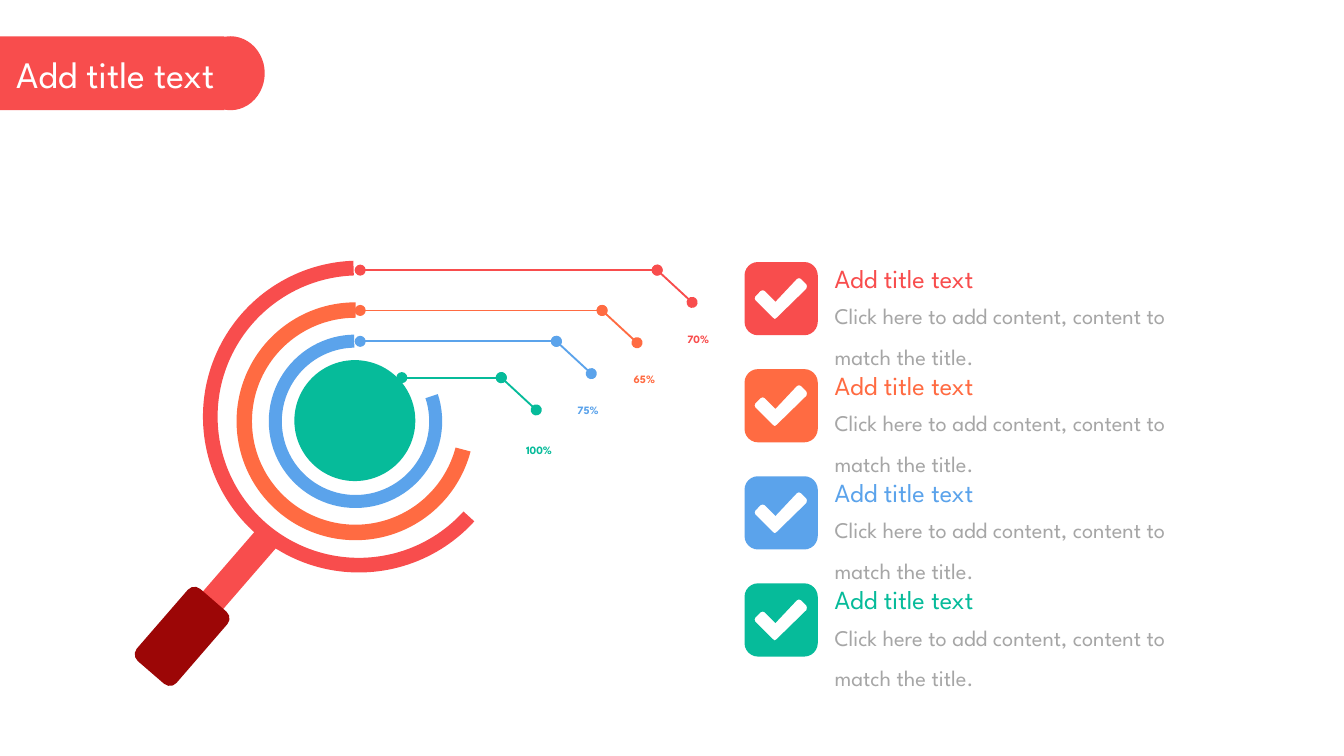
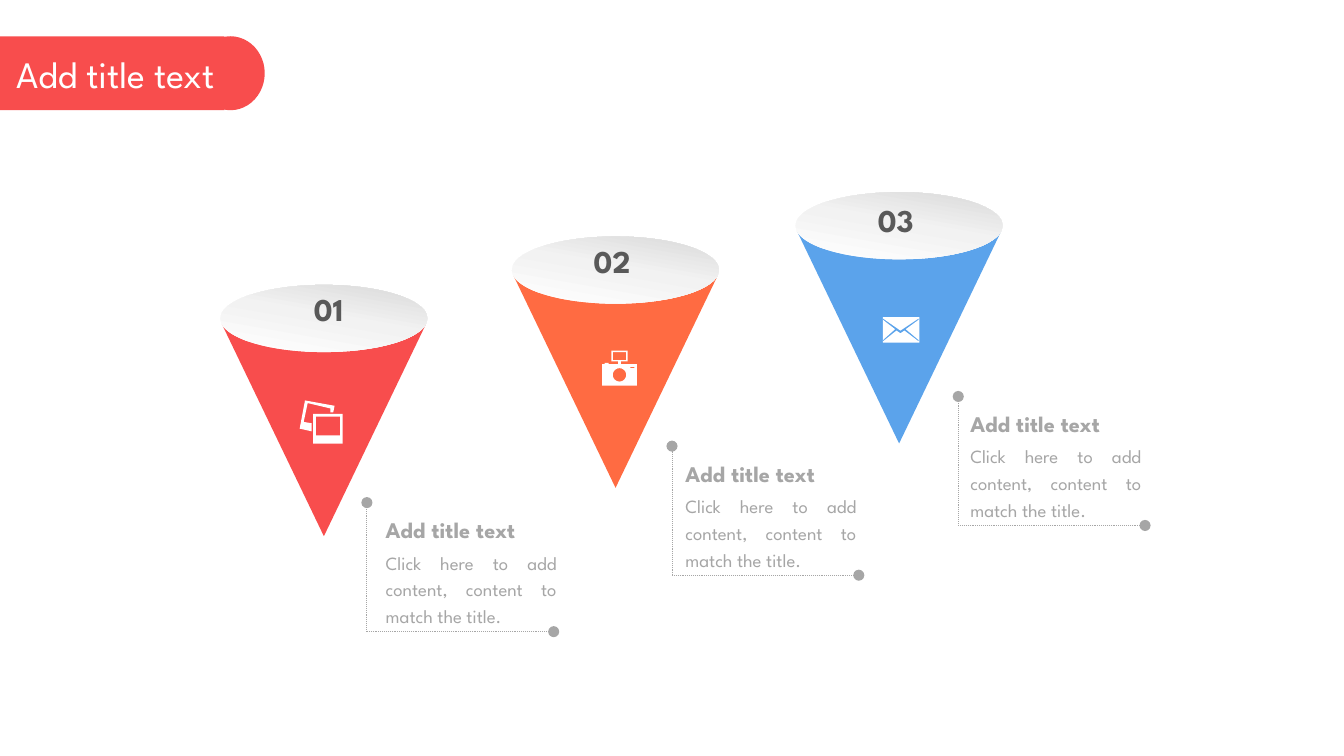
import copy
import math

import pptx
import pptx.dml.color
import pptx.enum.dml
import pptx.enum.shapes
import pptx.enum.text
import pptx.oxml.ns
import pptx.util
from lxml import etree

Inches = pptx.util.Inches
Pt = pptx.util.Pt
qn = pptx.oxml.ns.qn
SHAPE = pptx.enum.shapes.MSO_SHAPE
ALIGN = pptx.enum.text.PP_ALIGN
ANCHOR = pptx.enum.text.MSO_ANCHOR

FONT = "League Spartan"
COLORS = {
    "red": "F84D4D", "orange": "FF6B42", "blue": "5BA3EB", "green": "06BB9A",
    "grip": "9C0606", "white": "FFFFFF", "pale": "F2F2F2", "silver": "D9D9D9",
    "grey": "A6A6A6", "dark": "595959",
}
TITLE = "Add title text"
BODY = "Click here to add content, content to match the title."
TIGHT = (0, 0)
PADDED = (0.07, 0.04)


def rgb(color):
    """Return the palette colour as an RGBColor."""
    return pptx.dml.color.RGBColor.from_string(COLORS[color])


def paint(shape, color):
    """Give a shape a flat fill without line or shadow."""
    shape.shadow.inherit = False
    shape.fill.solid()
    shape.fill.fore_color.rgb = rgb(color)
    shape.line.fill.background()
    return shape


def preset(slide, kind, box, color, rotation=0):
    """Add a flat preset shape."""
    shape = slide.shapes.add_shape(kind, *map(Inches, box))
    shape.rotation = rotation
    return paint(shape, color)


def outline(slide, left, top, contours, color):
    """Add a freeform whose later contours cut holes into the first."""
    contours = [[(Inches(left + x), Inches(top + y)) for x, y in contour] for contour in contours]
    builder = slide.shapes.build_freeform(*contours[0][0])
    for number, contour in enumerate(contours):
        if number:
            builder.move_to(*contour[0])
        builder.add_line_segments(contour[1:], close=True)
    return paint(builder.convert_to_shape(), color)


def arc(x, y, radius, start, end, steps):
    """Return points along a circular arc, with angles in degrees."""
    angles = [math.radians(start + (end - start) * i / steps) for i in range(steps + 1)]
    return [(x + radius * math.cos(a), y + radius * math.sin(a)) for a in angles]


def rectangle(left, top, right, bottom):
    """Return the corners of a rectangle."""
    return [(left, top), (right, top), (right, bottom), (left, bottom)]


def format_text(shape, text, size, color, bold=False, align=ALIGN.LEFT, spacing=None,
                before=0, insets=TIGHT, anchor=ANCHOR.TOP, wrap=True):
    """Write one paragraph into a shape and format it."""
    frame = shape.text_frame
    frame.text = text
    frame.word_wrap = wrap
    frame.auto_size = pptx.enum.text.MSO_AUTO_SIZE.SHAPE_TO_FIT_TEXT
    frame.vertical_anchor = anchor
    frame.margin_left = frame.margin_right = Inches(insets[0])
    frame.margin_top = frame.margin_bottom = Inches(insets[1])
    paragraph = frame.paragraphs[0]
    paragraph.alignment = align
    paragraph.space_before = Pt(before * size)
    if spacing:
        paragraph.line_spacing = spacing
    font = paragraph.font
    font.name, font.size, font.bold = FONT, Pt(size), bold
    font.color.rgb = rgb(color)


def label(slide, box, text, size, color, **options):
    """Add a formatted text box."""
    format_text(slide.shapes.add_textbox(*map(Inches, box)), text, size, color, **options)


def line(slide, start, end, color, width, ends, dash=None):
    """Add a straight connector with oval ends."""
    connector = slide.shapes.add_connector(
        pptx.enum.shapes.MSO_CONNECTOR.STRAIGHT, *map(Inches, start + end))
    connector.line.color.rgb = rgb(color)
    connector.line.width = Pt(width)
    if dash:
        connector.line.dash_style = dash
    properties = connector._element.spPr
    for end_name in ends:
        etree.SubElement(properties.find(qn("a:ln")), qn(f"a:{end_name}"), type="oval")
    etree.SubElement(properties, qn("a:effectLst"))


def title_band(slide, layout):
    """Build the rounded title band and place it on the layout."""
    for number, (kind, left, width) in enumerate(
            [(SHAPE.RECTANGLE, 0, 1.67), (SHAPE.OVAL, 1.46, 0.51)]):
        part = preset(slide, kind, (left, 0.27, width, 0.55), "red")
        part._element.nvSpPr.cNvPr.set("id", str(101 + number))
        layout.shapes._spTree.append(part._element)


def titled_slide(deck, layout):
    """Add a slide with its title set in the band."""
    slide = deck.slides.add_slide(layout)
    title = slide.shapes.title
    title.left, title.top, title.width, title.height = map(Inches, (0.12, 0.38, 1.85, 0.34))
    format_text(title, TITLE, 20, "white", anchor=ANCHOR.MIDDLE)
    return slide


def ring(slide, left, top, size, adjustments, color):
    """Add one open ring of the magnifier."""
    shape = preset(slide, SHAPE.BLOCK_ARC, (left, top, size, size), color, 45)
    for index, value in enumerate(adjustments):
        shape.adjustments[index] = value


def magnifier(slide, left, top):
    """Draw the magnifier with its rings and handle."""
    ring(slide, left + 0.6, top + 0.31, 1.77, (197.83, 135.07, 0.065), "orange")
    preset(slide, SHAPE.RECTANGLE, (left + 0.47, top + 1.91, 0.2, 0.9), "red", 40.9)
    preset(slide, SHAPE.ROUNDED_RECTANGLE, (left, top + 2.44, 0.39, 0.71), "grip", 40.9)
    ring(slide, left + 0.35, top, 2.32, (214.33, 133.78, 0.047), "red")
    ring(slide, left + 0.84, top + 0.55, 1.29, (178.06, 134.45, 0.075), "blue")
    preset(slide, SHAPE.OVAL, (left + 1.03, top + 0.74, 0.9, 0.9), "green", 45)


def callout(slide, start, bend, y, color, percent, box):
    """Draw a bent leader from a ring to its percentage."""
    ends = ("headEnd", "tailEnd")
    line(slide, (bend + 0.26, y + 0.24), (bend, y), color, 1, ends)
    line(slide, (bend, y), (start, y), color, 1, ends)
    label(slide, box, percent, 6, color, bold=True, align=ALIGN.CENTER, spacing=1.5,
          before=0.2, anchor=ANCHOR.BOTTOM, wrap=False)


def check_item(slide, left, top, color):
    """Draw a check badge with a heading and text beside it."""
    size, radius = 0.545, 0.1
    near, far = radius, size - radius
    corners = [(far, far, 0), (near, far, 90), (near, near, 180), (far, near, 270)]
    badge = [point for x, y, angle in corners
             for point in arc(x, y, radius, angle, angle + 90, 6)]
    check = [(0.46, 0.2), (0.465, 0.18), (0.46, 0.165), (0.42, 0.125), (0.405, 0.12),
             (0.39, 0.125), (0.23, 0.295), (0.15, 0.215), (0.135, 0.21), (0.12, 0.215),
             (0.08, 0.255), (0.075, 0.27), (0.08, 0.285), (0.21, 0.415), (0.225, 0.425),
             (0.24, 0.415)]
    outline(slide, left, top, [badge, check], color)
    label(slide, (left + 0.67, top, 1.21, 0.24), TITLE, 14, color, before=0.2, wrap=False)
    label(slide, (left + 0.67, top + 0.2, 2.5, 0.57), BODY, 12, "grey", spacing=1.5, before=0.2)


def cone(slide, left, top, color, number, number_at):
    """Draw a cone with a shaded lid and its number."""
    body = [(1.48, 0), (1.52, 0.01), (0.76, 1.59), (0, 0.01), (0.06, 0)]
    outline(slide, left + 0.01, top + 0.28, [body], color)
    lid = preset(slide, SHAPE.OVAL, (left, top, 1.54, 0.5), "white")
    lid.fill.gradient()
    lid.fill.gradient_angle = 80
    stops = lid._element.spPr.find(".//" + qn("a:gsLst"))
    stops.insert(1, copy.deepcopy(stops[0]))
    shades = [(0, "white"), (0.53, "pale"), (1, "silver")]
    for stop, (position, shade) in zip(lid.fill.gradient_stops, shades):
        stop.position = position
        stop.color.rgb = rgb(shade)
    label(slide, (*number_at, 0.43, 0.38), number, 17, "dark", bold=True,
          align=ALIGN.CENTER, spacing=1.2, insets=PADDED, wrap=False)


def photos_icon(slide, left, top):
    """Draw two overlapping photo frames."""
    outline(slide, left + 0.1, top + 0.1,
            [rectangle(0, 0, 0.22, 0.22), rectangle(0.02, 0.02, 0.2, 0.16)], "white")
    back = [(0.04, 0), (0.26, 0.04), (0.25, 0.09), (0.23, 0.09), (0.23, 0.06), (0.06, 0.02),
            (0.03, 0.16), (0.09, 0.17), (0.09, 0.23), (0, 0.21)]
    outline(slide, left, top, [back], "white")


def camera_icon(slide, left, top):
    """Draw a camera with a viewfinder."""
    case = [(0.14, 0.1), (0.14, 0.08), (0.19, 0.08), (0.19, 0), (0.07, 0), (0.07, 0.08),
            (0.12, 0.08), (0.12, 0.1), (0.05, 0.1), (0.05, 0.09), (0.02, 0.09), (0.02, 0.1),
            (0, 0.1), (0, 0.26), (0.26, 0.26), (0.26, 0.1)]
    outline(slide, left, top, [case, rectangle(0.08, 0.01, 0.18, 0.07),
                               arc(0.13, 0.18, 0.05, 0, 360, 24),
                               rectangle(0.21, 0.12, 0.24, 0.13)], "white")


def envelope_icon(slide, left, top):
    """Draw an envelope with its folds cut out."""
    folds = [(0.265, 0.02), (0.17, 0.09), (0.265, 0.17), (0.265, 0.18), (0.16, 0.1),
             (0.13, 0.12), (0.1, 0.1), (0, 0.18), (0, 0.17), (0.09, 0.09), (0, 0.02),
             (0, 0.01), (0.13, 0.1), (0.265, 0.01)]
    outline(slide, left, top, [rectangle(0, 0, 0.27, 0.19), folds], "white")


def note(slide, left, bottom, text_left):
    """Draw a dotted corner with a heading and text inside it."""
    dotted = pptx.enum.dml.MSO_LINE.ROUND_DOT
    for end in [(left + 1.39, bottom), (left, bottom - 0.96)]:
        line(slide, (left, bottom), end, "grey", 0.5, ["tailEnd"], dotted)
    label(slide, (text_left, bottom - 0.94, 1.2, 0.29), TITLE, 12, "grey", bold=True,
          spacing=1.2, insets=PADDED)
    label(slide, (text_left, bottom - 0.67, 1.41, 0.66), BODY, 10, "grey",
          align=ALIGN.JUSTIFY, spacing=1.2, insets=PADDED)


def magnifier_slide(slide):
    """Fill the slide with the magnifier and its checklist."""
    magnifier(slide, 1.16, 1.94)
    callout(slide, 2.68, 4.89, 2.01, "red", "70%", (5.11, 2.44, 0.17, 0.13))
    callout(slide, 2.68, 4.48, 2.31, "orange", "65%", (4.71, 2.74, 0.17, 0.13))
    callout(slide, 2.68, 4.14, 2.54, "blue", "75%", (4.29, 2.97, 0.17, 0.13))
    callout(slide, 2.99, 3.73, 2.81, "green", "100%", (3.9, 3.27, 0.22, 0.13))
    for row, color in enumerate(["red", "orange", "blue", "green"]):
        check_item(slide, 5.54, 1.95 + row * 0.797, color)


def cones_slide(slide):
    """Fill the slide with three rising cones and their notes."""
    cone(slide, 5.92, 1.43, "blue", "03", (6.45, 1.4))
    cone(slide, 3.81, 1.76, "orange", "02", (4.34, 1.7))
    cone(slide, 1.64, 2.12, "red", "01", (2.23, 2.06))
    envelope_icon(slide, 6.57, 2.36)
    camera_icon(slide, 4.48, 2.61)
    photos_icon(slide, 2.23, 2.98)
    note(slide, 2.73, 4.7, 2.8)
    note(slide, 5, 4.28, 5.03)
    note(slide, 7.13, 3.91, 7.15)


def main():
    """Build and save the presentation."""
    deck = pptx.Presentation()
    deck.slide_width = Inches(10)
    deck.slide_height = deck.slide_width * 9 // 16
    layout = deck.slide_layouts.get_by_name("Title Only")
    first, second = titled_slide(deck, layout), titled_slide(deck, layout)
    title_band(first, layout)
    magnifier_slide(first)
    cones_slide(second)
    deck.save("out.pptx")


if __name__ == "__main__":
    main()
